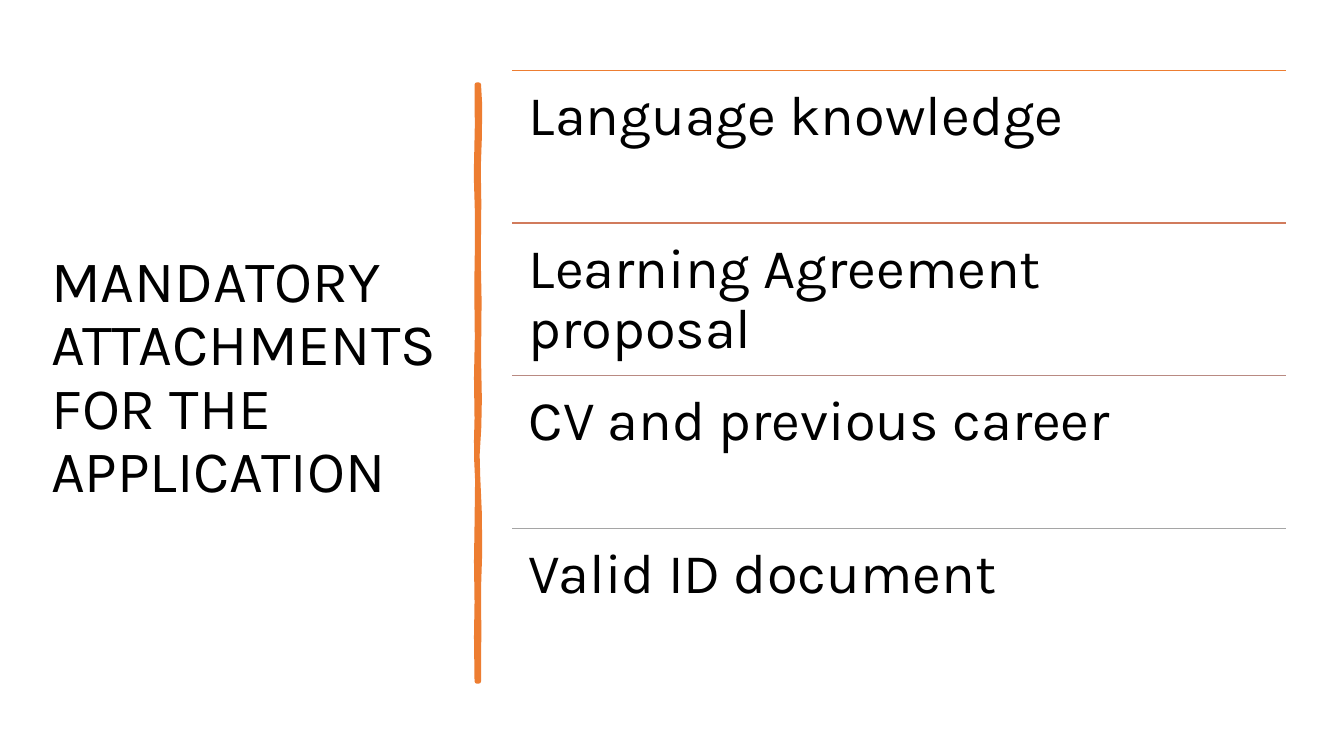
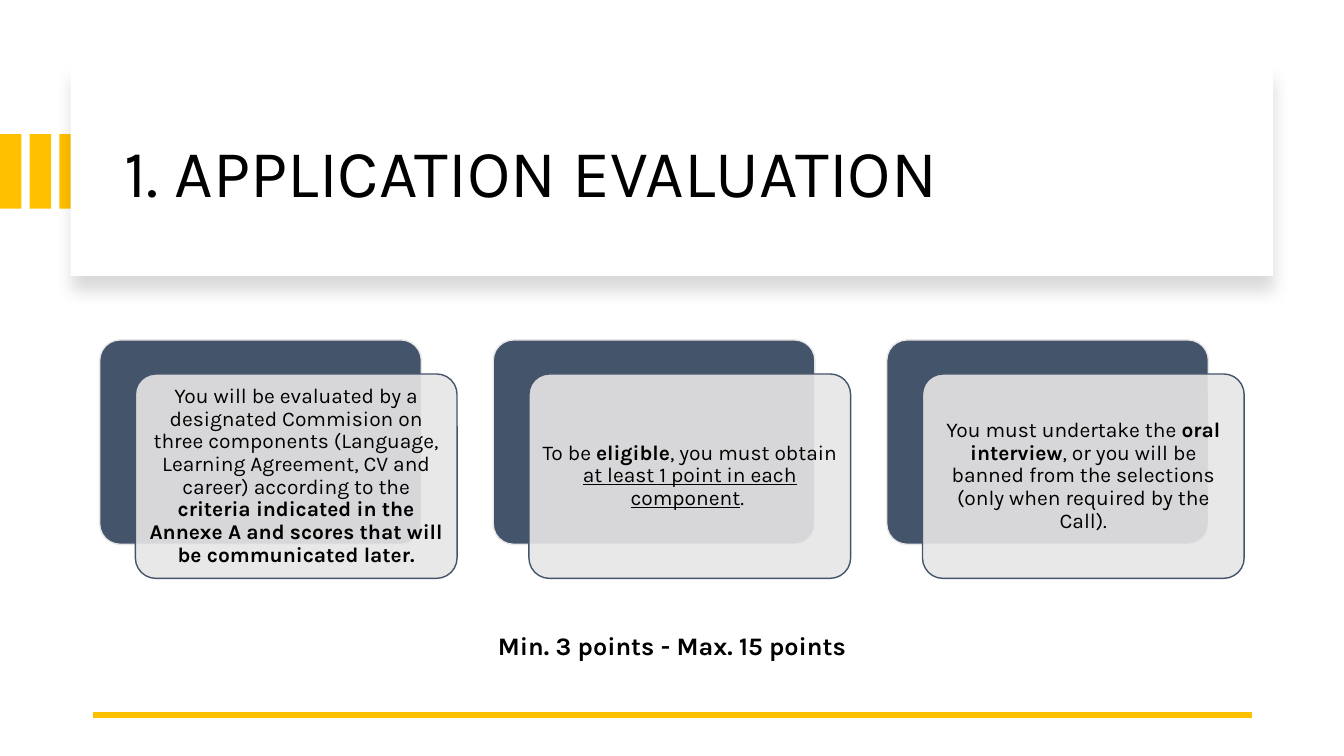
from dataclasses import dataclass

from lxml import etree
from pptx import Presentation
from pptx.dml.color import RGBColor
from pptx.enum import shapes, text
from pptx.oxml import ns
from pptx.util import Pt


@dataclass(frozen=True)
class Theme:
    font: str = "Karla"
    ink: str = "000000"
    paper: str = "FFFFFF"
    orange: str = "ED7D31"
    yellow: str = "FFC000"
    navy: str = "44546A"
    mist: str = "E7E6E6"
    rules: tuple = ("ED7D31", "D17B5C", "B98A82", "A5A5A5")
    side_title: int = 42
    title: int = 48
    item: int = 40
    card: int = 15
    note: int = 18


def write(shape, spans, size, inset=(7.2, 3.6), align=text.PP_ALIGN.LEFT,
          anchor=text.MSO_ANCHOR.TOP, spacing=0.9):
    frame = shape.text_frame
    frame.word_wrap = True
    frame.vertical_anchor = anchor
    frame.margin_left = frame.margin_right = Pt(inset[0])
    frame.margin_top = frame.margin_bottom = Pt(inset[1])
    para = frame.paragraphs[0]
    para.alignment = align
    para.line_spacing = spacing
    para.font.name = theme.font
    para.font.size = Pt(size)
    para.font.color.rgb = RGBColor.from_string(theme.ink)
    for words, style in spans:
        span = para.add_run()
        span.text = words
        if style == "bold":
            span.font.bold = True
        elif style == "underline":
            span.font.underline = True


def paint(shape, fill=None, line=None, width=1):
    if fill:
        shape.shadow.inherit = False
        shape.fill.solid()
        shape.fill.fore_color.rgb = RGBColor.from_string(fill)
    else:
        etree.SubElement(shape.element.spPr, ns.qn("a:effectLst"))
    if line:
        shape.line.color.rgb = RGBColor.from_string(line)
        shape.line.width = Pt(width)
        if not fill:
            effects = shape.element.spPr.find(ns.qn("a:effectLst"))
            shape.element.spPr.append(effects)
    else:
        shape.line.fill.background()


theme = Theme()
MIDDLE = text.MSO_ANCHOR.MIDDLE
CENTER = text.PP_ALIGN.CENTER
RECTANGLE = shapes.MSO_SHAPE.RECTANGLE
ROUNDED = shapes.MSO_SHAPE.ROUNDED_RECTANGLE
STRAIGHT = shapes.MSO_CONNECTOR.STRAIGHT

deck = Presentation()
deck.slide_width, deck.slide_height = Pt(960), Pt(540)
blank = deck.slide_layouts[6]

page = deck.slides.add_slide(blank)
box = page.shapes.add_textbox(Pt(29.5), Pt(50.4), Pt(299.5), Pt(440))
write(box, [("MANDATORY ATTACHMENTS FOR THE APPLICATION", "")], theme.side_title, anchor=MIDDLE)

right_edge = [(342, 60.5), (342.8, 75), (342.6, 98), (341.8, 120), (342.2, 145), (341.8, 185),
              (342.4, 215), (342, 256), (342.6, 285), (342.2, 305), (341, 325), (341.4, 340),
              (342.6, 367), (342.8, 395), (342, 420), (342.2, 450), (342, 486.7)]
left_edge = [(340.6, 486.7), (340.2, 455), (340.6, 430), (340.2, 401), (340.6, 375), (341, 343),
             (340.4, 330), (340.2, 315), (340.6, 299), (340.2, 270), (340.8, 241), (340.4, 205),
             (340.8, 180), (340.8, 150), (340.2, 130), (340.2, 118), (340.8, 90), (340.6, 60.5)]
points = [(Pt(x), Pt(y)) for x, y in right_edge + left_edge]
builder = page.shapes.build_freeform(*points[0])
builder.add_line_segments(points[1:], close=True)
stroke = builder.convert_to_shape()
paint(stroke, theme.orange, theme.orange, 3.25)
etree.SubElement(stroke.line._get_or_add_ln(), ns.qn("a:round"))

items = ["Language knowledge", "Learning Agreement proposal",
         "CV and previous career", "Valid ID document"]
row_left, row_top, row_width, row_height = 365.8, 50.4, 553, 109
for index, (item, color) in enumerate(zip(items, theme.rules)):
    top = row_top + index * row_height
    rule = page.shapes.add_connector(STRAIGHT, Pt(row_left), Pt(top),
                                     Pt(row_left + row_width), Pt(top))
    paint(rule, line=color)
    box = page.shapes.add_textbox(Pt(row_left), Pt(top), Pt(row_width), Pt(row_height))
    write(box, [(item, "")], theme.item, inset=(12, 12))

page = deck.slides.add_slide(blank)
for index in range(3):
    bar = page.shapes.add_shape(RECTANGLE, Pt(index * 21.2), Pt(95.8), Pt(15.3), Pt(53.3))
    paint(bar, theme.yellow)

panel = page.shapes.add_shape(RECTANGLE, Pt(50.4), Pt(48.2), Pt(859), Pt(149))
paint(panel, theme.paper)
effects = panel.element.spPr.find(ns.qn("a:effectLst"))
shadow = etree.SubElement(effects, ns.qn("a:outerShdw"), blurRad=str(Pt(11)),
                          dist=str(Pt(10)), dir="5400000", algn="t", rotWithShape="0")
tint = etree.SubElement(shadow, ns.qn("a:srgbClr"), val=theme.ink)
etree.SubElement(tint, ns.qn("a:alpha"), val="15000")

box = page.shapes.add_textbox(Pt(82), Pt(64), Pt(801.5), Pt(122.4))
write(box, [("1. APPLICATION EVALUATION", "")], theme.title, anchor=MIDDLE)

rule = page.shapes.add_connector(STRAIGHT, Pt(894.2), Pt(510.5), Pt(66.2), Pt(510.5))
paint(rule, line=theme.yellow, width=4.5)

cards = [
    [("You will be evaluated by a designated Commision on three components (Language, "
      "Learning Agreement, CV and career) according to the ", ""),
     ("criteria indicated in the Annexe A and scores that will be communicated later.", "bold")],
    [("To be ", ""), ("eligible", "bold"), (", you must obtain ", ""),
     ("at least 1 point in each component", "underline"), (". ", "")],
    [("You must undertake the ", ""), ("oral interview", "bold"),
     (", or you will be banned from the selections (only when required by the Call).", "")],
]
card_left, card_top, card_step = 71.2, 242.8, 281.1
for index, spans in enumerate(cards):
    left = card_left + index * card_step
    layers = [(0, 0, theme.navy, theme.mist), (25.5, 24.3, theme.mist, theme.navy)]
    for shift_x, shift_y, fill, line in layers:
        card = page.shapes.add_shape(ROUNDED, Pt(left + shift_x), Pt(card_top + shift_y),
                                     Pt(229.8), Pt(146))
        card.adjustments[0] = 0.1
        paint(card, fill, line)
    tint = card.element.spPr.find(ns.qn("a:solidFill"))[0]
    etree.SubElement(tint, ns.qn("a:alpha"), val="90000")
    write(card, spans, theme.card, inset=(4.3, 4.3), align=CENTER, anchor=MIDDLE)

box = page.shapes.add_textbox(Pt(54), Pt(447), Pt(852), Pt(29))
write(box, [("Min. 3 points - Max. 15 points", "bold")], theme.note, align=CENTER, spacing=1.0)

deck.save("out.pptx")
